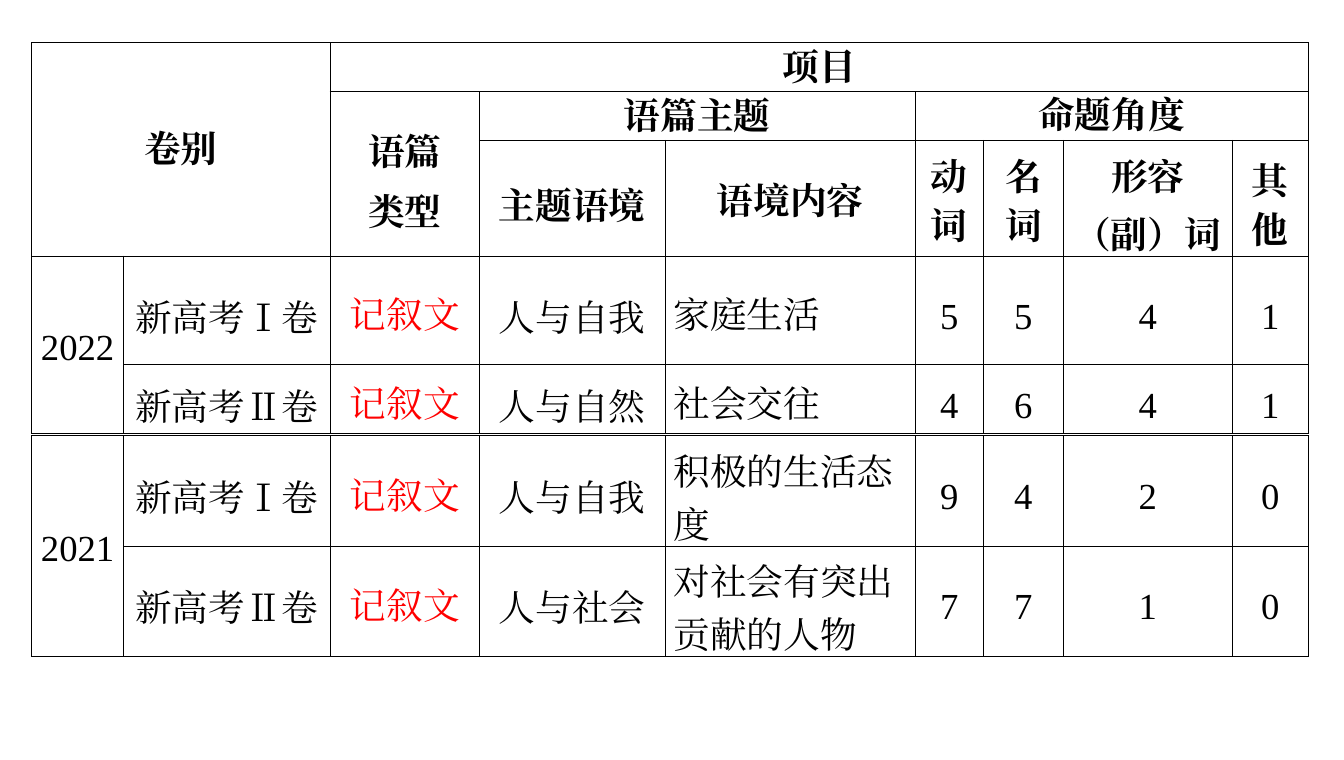
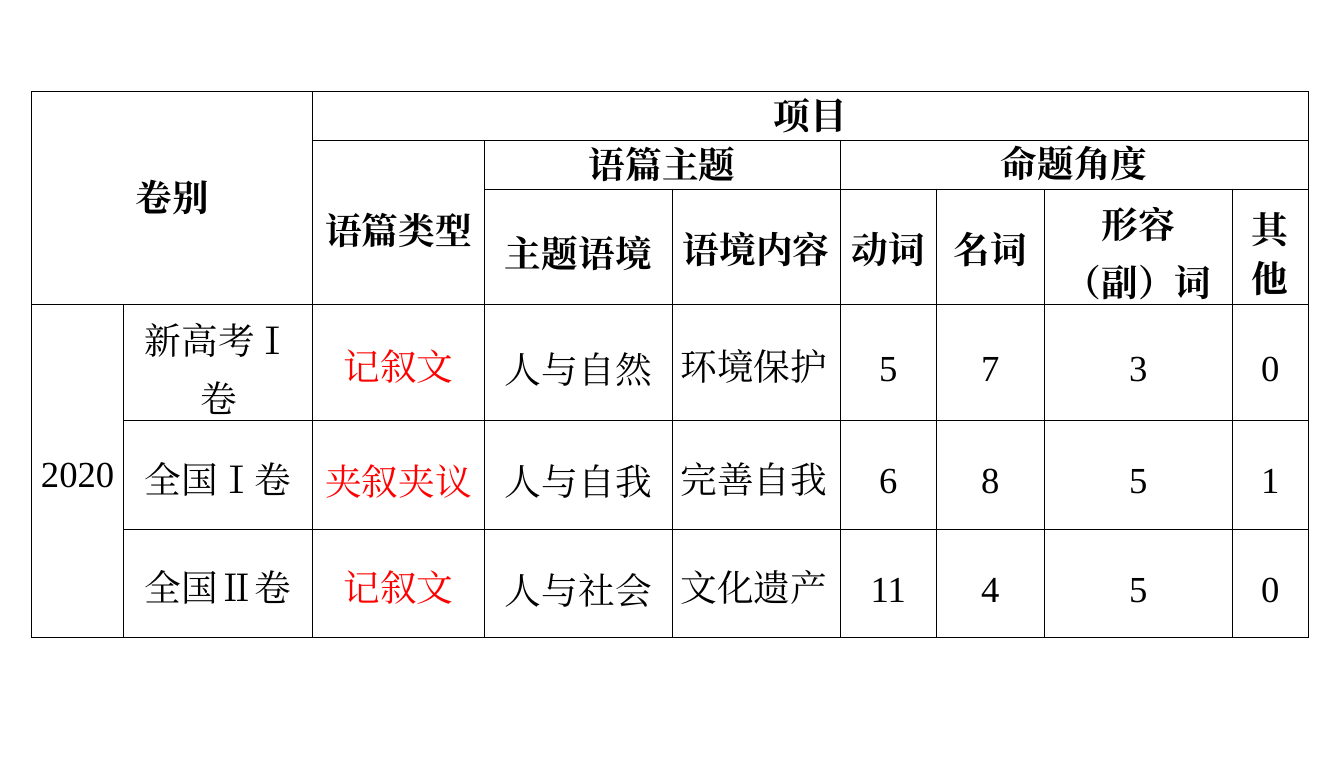
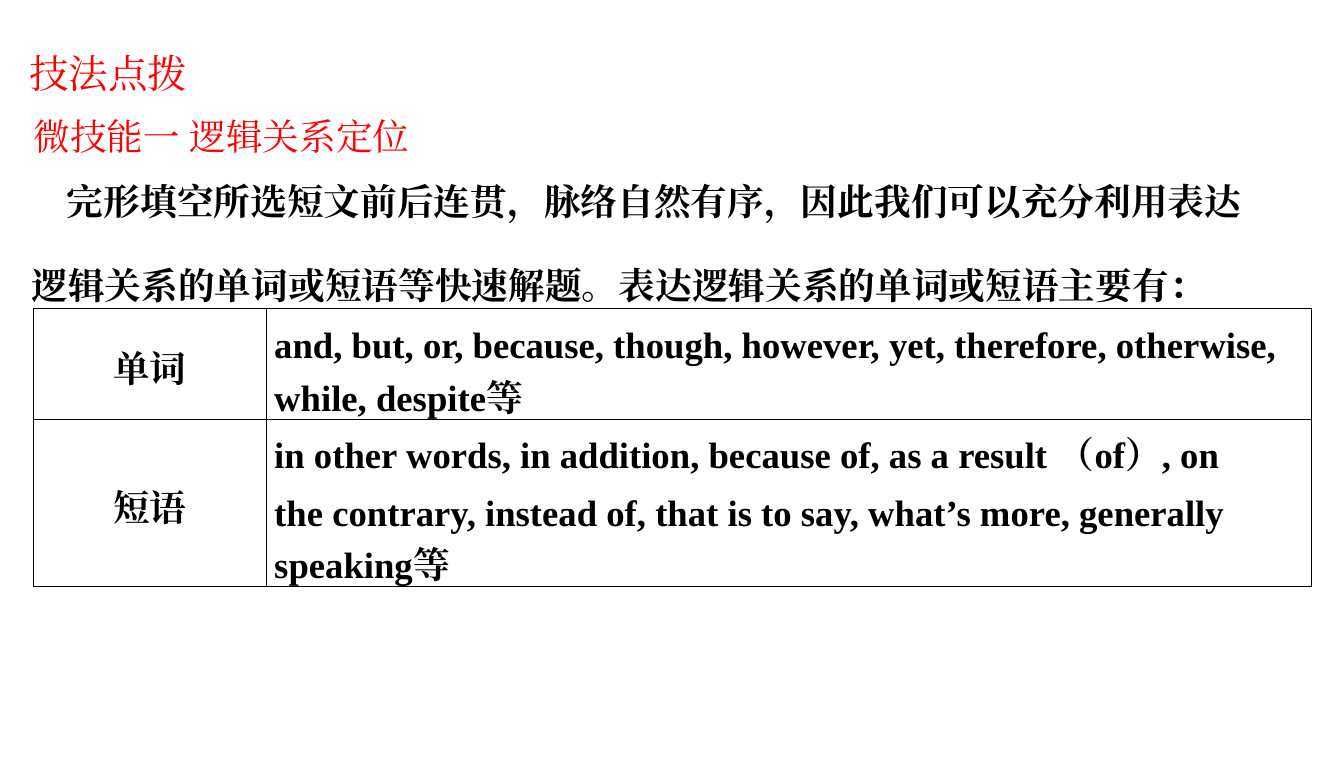
from dataclasses import dataclass

from lxml.etree import SubElement
from pptx import Presentation
from pptx.dml.color import RGBColor
from pptx.enum.lang import MSO_LANGUAGE_ID
from pptx.enum.text import MSO_ANCHOR, PP_ALIGN
from pptx.oxml import parse_xml
from pptx.oxml.ns import nsdecls, qn
from pptx.util import Inches, Pt


@dataclass(frozen=True)
class Theme:
    font: str = "Times New Roman"
    ink: str = "000000"
    accent: str = "FF0000"
    heading_size: int = 28
    body_size: int = 26
    border_width: float = 0.75
    cell_margin: float = 0.08
    text_width: float = 12.6
    first_line_indent: float = 0.33
    wrapped_line_spacing: int = 41


THEME = Theme()
SLIDE_SIZE = (13.23, 7.48)
TABLE_LEFT = 0.31

# Columns: year, paper, genre, theme, content, verbs, nouns, adjectives/adverbs, others
BODY_SPACING = (33, 41, 37, 41, 37, 38, 38, 38, 38)
GENRE_COLUMN, CONTENT_COLUMN = 2, 4

# Row, column, rows spanned, columns spanned, text, line spacing
HEADER = [
    (0, 0, 3, 2, "卷别", 30),
    (0, 2, 1, 7, "项目", 30),
    (1, 3, 1, 2, "语篇主题", 31),
    (1, 5, 1, 4, "命题角度", 29),
    (2, 3, 1, 1, "主题语境", 41),
    (2, 4, 1, 1, "语境内容", 35),
    (2, 5, 1, 1, "动词", 35),
    (2, 6, 1, 1, "名词", 35),
    (2, 7, 1, 1, "形容\n（副）词", 41),
    (2, 8, 1, 1, "其\n他", 35),
]
HEADER_ROWS = [0.48, 0.48, 1.14]

# A pair gives the text and its own line spacing
PAPERS_2022 = [
    ("2022", "新高考Ⅰ卷", "记叙文", "人与自我", "家庭生活", "5", "5", "4", "1"),
    ("2022", "新高考Ⅱ卷", "记叙文", "人与自然", "社会交往", "4", "6", "4", "1"),
]
PAPERS_2021 = [
    ("2021", "新高考Ⅰ卷", "记叙文", "人与自我", "积极的生活态\n度", "9", "4", "2", "0"),
    ("2021", "新高考Ⅱ卷", "记叙文", "人与社会", "对社会有突出\n贡献的人物", "7", "7", "1", "0"),
]
PAPERS_2020 = [
    (("2020", 34), "新高考Ⅰ卷", "记叙文", "人与自然", "环境保护", "5", "7", "3", "0"),
    ("2020", ("全国Ⅰ卷", 37), ("夹叙夹议", 41), "人与自我", "完善自我", "6", "8", "5", "1"),
    ("2020", ("全国Ⅱ卷", 37), "记叙文", "人与社会", "文化遗产", "11", "4", "5", "0"),
]

RECENT_COLUMNS = [0.91, 2.03, 1.47, 1.83, 2.46, 0.67, 0.79, 1.66, 0.75]
EARLIER_COLUMNS = [0.91, 1.86, 1.69, 1.85, 1.65, 0.95, 1.06, 1.85, 0.75]

# Top, columns, header label for genre (None: no header), papers, paper row heights
SURVEY_SLIDES = [
    [
        (0.42, RECENT_COLUMNS, "语篇\n类型", PAPERS_2022, [1.07, 0.68]),
        (4.29, RECENT_COLUMNS, None, PAPERS_2021, [1.08, 1.08]),
    ],
    [(0.9, EARLIER_COLUMNS, "语篇类型", PAPERS_2020, [1.14, 1.07, 1.07])],
]

# Left, top, height, text, line spacing, style
SKILL_TEXTS = [
    (0.29, 0.32, 1.09, "技法点拨", 45, {"size": THEME.heading_size, "color": THEME.accent}),
    (0.33, 0.97, 1.04, "微技能一 逻辑关系定位", 42, {"color": THEME.accent}),
    (0.33, 1.61, 0.53, "完形填空所选短文前后连贯，脉络自然有序，因此我们可以充分利用表达", 42,
     {"bold": True, "indent": THEME.first_line_indent}),
    (0.31, 2.44, 0.53, "逻辑关系的单词或短语等快速解题。表达逻辑关系的单词或短语主要有：", 42,
     {"bold": True}),
]
CONNECTIVES = [
    ("单词", "and, but, or, because, though, however, yet, therefore, otherwise,\n"
             "while, despite等"),
    ("短语", "in other words, in addition, because of, as a result （of）, on\n"
             "the contrary, instead of, that is to say, what’s more, generally\n"
             "speaking等"),
]


def write_text(text_frame, text, spacing, size=THEME.body_size, color=THEME.ink,
               bold=False, align=PP_ALIGN.LEFT, indent=0):
    """Write one paragraph per line; spacing holds for the last, the others are looser."""
    text_frame.text = text
    text_frame.word_wrap = True
    for paragraph in text_frame.paragraphs:
        paragraph.alignment = align
        paragraph.line_spacing = Pt(max(spacing, THEME.wrapped_line_spacing))
        if indent:
            paragraph._p.get_or_add_pPr().set("indent", str(Inches(indent)))
        for run in paragraph.runs:
            font = run.font
            font.name, font.size, font.bold = THEME.font, Pt(size), bold
            font.color.rgb = RGBColor.from_string(color)
            font.language_id = MSO_LANGUAGE_ID.SIMPLIFIED_CHINESE
            SubElement(run._r.get_or_add_rPr(), qn("a:ea")).set("typeface", THEME.font)
    text_frame.paragraphs[-1].line_spacing = Pt(spacing)


def style_cell(cell):
    cell.fill.background()
    cell.vertical_anchor = MSO_ANCHOR.MIDDLE
    cell.margin_left = cell.margin_right = Inches(THEME.cell_margin)
    cell.margin_top = cell.margin_bottom = 0
    properties = cell._tc.get_or_add_tcPr()
    for position, side in enumerate("LRTB"):
        properties.insert(position, parse_xml(
            f'<a:ln{side} {nsdecls("a")} w="{Pt(THEME.border_width)}"><a:solidFill>'
            f'<a:srgbClr val="{THEME.ink}"/></a:solidFill></a:ln{side}>'))


def add_grid(slide, left, top, columns, rows):
    frame = slide.shapes.add_table(
        len(rows), len(columns), Inches(left), Inches(top),
        Inches(sum(columns)), Inches(sum(rows)))
    table = frame.table
    table.first_row = table.horz_banding = False
    for column, width in zip(table.columns, columns):
        column.width = Inches(width)
    for row, height in zip(table.rows, rows):
        row.height = Inches(height)
    for cell in table.iter_cells():
        style_cell(cell)
    return table


def add_survey(slide, top, columns, genre_label, papers, paper_rows):
    header_rows = HEADER_ROWS if genre_label else []
    first = len(header_rows)
    table = add_grid(slide, TABLE_LEFT, top, columns, header_rows + paper_rows)

    if genre_label:
        for row, column, down, across, text, spacing in HEADER + [
                (1, GENRE_COLUMN, 2, 1, genre_label, 42)]:
            cell = table.cell(row, column)
            if down * across > 1:
                cell.merge(table.cell(row + down - 1, column + across - 1))
            write_text(cell.text_frame, text, spacing, bold=True, align=PP_ALIGN.CENTER)

    table.cell(first, 0).merge(table.cell(first + len(papers) - 1, 0))
    for row, paper in enumerate(papers, first):
        for column, entry in enumerate(paper):
            cell = table.cell(row, column)
            if cell.is_spanned:
                continue
            text, spacing = entry if isinstance(entry, tuple) else (entry, BODY_SPACING[column])
            write_text(
                cell.text_frame, text, spacing,
                color=THEME.accent if column == GENRE_COLUMN else THEME.ink,
                align=PP_ALIGN.LEFT if column == CONTENT_COLUMN else PP_ALIGN.CENTER)


def add_skill_text(slide, left, top, height, text, spacing, style):
    box = slide.shapes.add_textbox(
        Inches(left), Inches(top), Inches(THEME.text_width), Inches(height))
    frame = box.text_frame
    frame.margin_left = frame.margin_right = frame.margin_top = frame.margin_bottom = 0
    write_text(frame, text, spacing, **style)


def add_connectives(slide):
    table = add_grid(slide, 0.33, 3.04, [2.29, 10.29], [1.08, 1.65])
    for row, entries in enumerate(CONNECTIVES):
        for column, align in enumerate((PP_ALIGN.CENTER, PP_ALIGN.LEFT)):
            write_text(table.cell(row, column).text_frame, entries[column], 37,
                       bold=True, align=align)


def main():
    presentation = Presentation()
    presentation.slide_width, presentation.slide_height = map(Inches, SLIDE_SIZE)
    blank = presentation.slide_layouts[6]

    for surveys in SURVEY_SLIDES:
        slide = presentation.slides.add_slide(blank)
        for survey in surveys:
            add_survey(slide, *survey)

    slide = presentation.slides.add_slide(blank)
    for skill_text in SKILL_TEXTS:
        add_skill_text(slide, *skill_text)
    add_connectives(slide)

    presentation.save("out.pptx")


if __name__ == "__main__":
    main()
